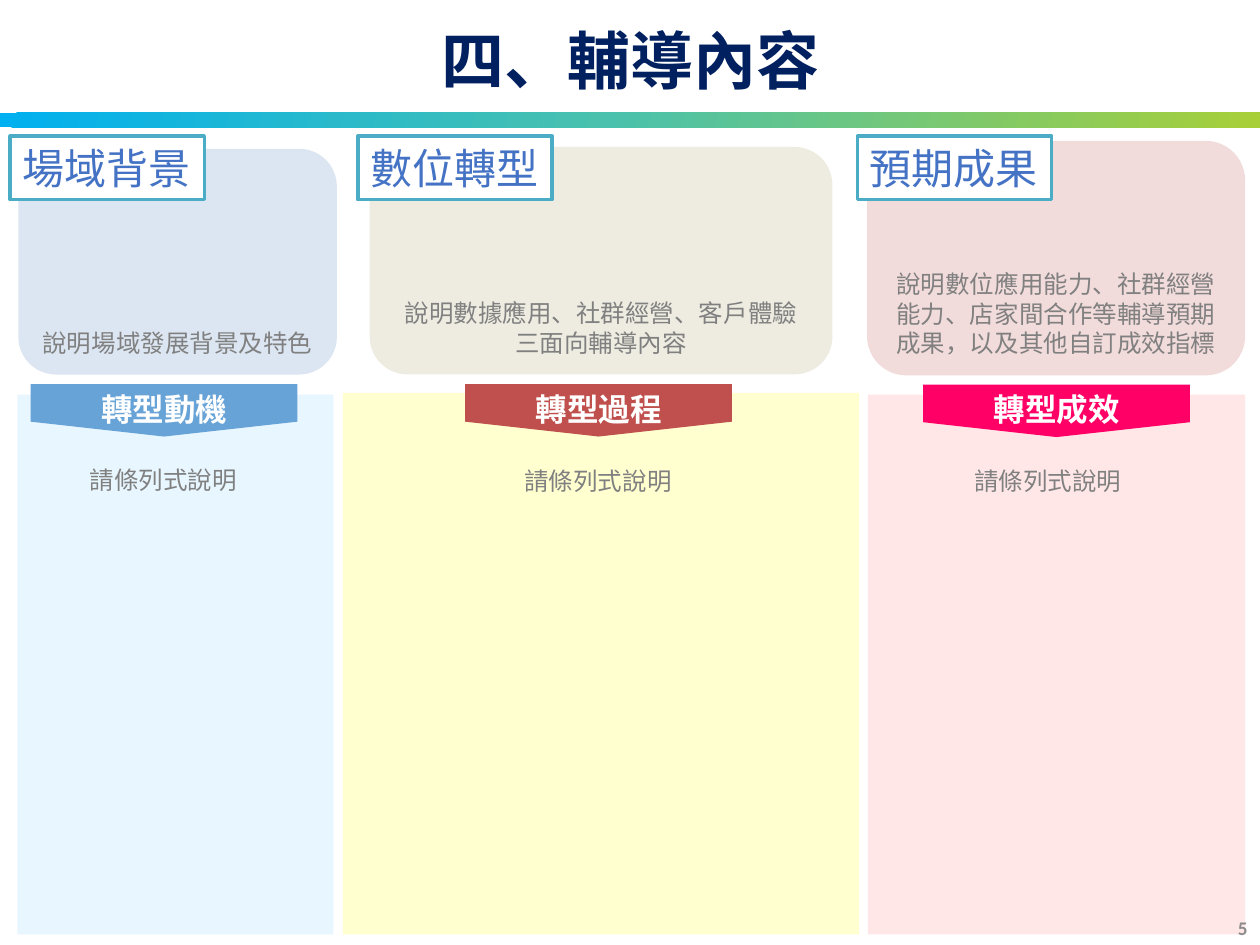
import copy
from dataclasses import dataclass

import pptx
import pptx.dml.color
import pptx.enum.shapes
import pptx.enum.text
import pptx.oxml.ns
import pptx.util
from lxml import etree

Pt = pptx.util.Pt
Align = pptx.enum.text.PP_ALIGN
Anchor = pptx.enum.text.MSO_ANCHOR
Preset = pptx.enum.shapes.MSO_SHAPE
qn = pptx.oxml.ns.qn


@dataclass(frozen=True)
class Theme:
    font: str = "Noto Sans CJK SC"
    banner_font: str = "Times New Roman"
    hint_font: str = "Arial"
    number_font: str = "Calibri"
    title_size: int = 36
    tag_size: int = 24
    banner_size: int = 18
    body_size: int = 14
    number_size: int = 11
    navy: str = "002060"
    white: str = "FFFFFF"
    gray: str = "808080"
    number_gray: str = "8C8C8C"
    tag_text: str = "4472C4"
    tag_line: str = "4BACC6"
    stripe: tuple = ((0, "00B0F0"), (0.48, "49C1AD"), (1, "A8CF38"))


@dataclass(frozen=True)
class Column:
    """One column; each area is left, top, width, height in points."""
    tag: str
    tag_left: float
    summary: str
    card: tuple
    card_color: str
    banner: str
    banner_at: tuple
    banner_color: str
    panel: tuple
    panel_color: str
    hint_at: tuple


COLUMNS = (
    Column("場域背景", 5.8, "說明場域發展背景及特色", (10.5, 85, 182, 129), "DCE6F2",
           "轉型動機", (17.5, 219.5), "67A3D7",
           (10, 225.5, 180.5, 308.5), "CCECFF", (37.5, 262)),
    Column("數位轉型", 204.5, "說明數據應用、社群經營、客戶體驗三面向輔導內容",
           (211.2, 84, 264.5, 130), "EEECE1",
           "轉型過程", (265.8, 219.5), "C0504D",
           (196, 224.5, 295, 309.5), "FFFF99", (286, 263)),
    Column("預期成果", 490, "說明數位應用能力、社群經營能力、店家間合作等輔導預期成果，以及其他自訂成效指標",
           (495.5, 80.5, 216, 134), "F2DCDB",
           "轉型成效", (527.5, 219.8), "FF0066",
           (496, 225.5, 215.5, 308.5), "FFCCCC", (543, 262.5)),
)


class SlideBuilder:
    def __init__(self, slide, theme):
        self.slide = slide
        self.theme = theme

    def color(self, value):
        return pptx.dml.color.RGBColor.from_string(value)

    def set_text(self, shape, text, size, color, font, bold=False,
                 align=Align.CENTER, anchor=Anchor.TOP):
        frame = shape.text_frame
        frame.word_wrap = True
        frame.auto_size = pptx.enum.text.MSO_AUTO_SIZE.NONE
        frame.vertical_anchor = anchor
        frame.text = text
        para = frame.paragraphs[0]
        para.alignment = align
        for span in para.runs:
            span.font.name = font
            span.font.size = Pt(size)
            span.font.bold = bold
            span.font.color.rgb = self.color(color)
            east_asian = etree.Element(qn("a:ea"), typeface=self.theme.font)
            span.font._element.find(qn("a:latin")).addnext(east_asian)

    def paint(self, shape, fill, line=None, opacity=None):
        shape.shadow.inherit = False
        shape.fill.solid()
        shape.fill.fore_color.rgb = self.color(fill)
        if opacity is not None:
            tint = shape._element.spPr.find(qn("a:solidFill"))[0]
            etree.SubElement(tint, qn("a:alpha"), val=str(opacity * 1000))
        if line:
            shape.line.color.rgb = self.color(line)
            shape.line.width = Pt(2)
        else:
            shape.line.fill.background()

    def shape(self, preset, area, fill, **style):
        shape = self.slide.shapes.add_shape(preset, *map(Pt, area))
        self.paint(shape, fill, **style)
        return shape

    def stripe(self, area):
        band = self.shape(Preset.RECTANGLE, area, self.theme.white)
        band.fill.gradient()
        band.fill.gradient_angle = 342
        stops = band._element.spPr.find(qn("a:gradFill")).find(qn("a:gsLst"))
        stops.insert(1, copy.deepcopy(stops[0]))
        for stop, (position, value) in zip(band.fill.gradient_stops, self.theme.stripe):
            stop.position = position
            stop.color.rgb = self.color(value)

    def title(self, text, area):
        title = self.slide.shapes.title
        title.left, title.top, title.width, title.height = map(Pt, area)
        self.set_text(title, text, self.theme.title_size, self.theme.navy,
                      self.theme.font, bold=True, anchor=Anchor.MIDDLE)

    def text(self, area, text, size, color, font, **style):
        box = self.slide.shapes.add_textbox(*map(Pt, area))
        self.set_text(box, text, size, color, font, **style)
        return box

    def panel(self, area, color):
        self.shape(Preset.RECTANGLE, area, color, opacity=47)

    def banner(self, left, top, text, color):
        """Draw a ribbon with a shallow point below, and its label."""
        width, shoulder, height = 152.5, 21.5, 30
        outline = self.slide.shapes.build_freeform(Pt(left), Pt(top))
        corners = ((width, 0), (width, shoulder), (width / 2, height), (0, shoulder))
        outline.add_line_segments([(Pt(left + x), Pt(top + y)) for x, y in corners])
        self.paint(outline.convert_to_shape(), color)
        box = self.text((left + 13.5, top + 1.5, 125.5, 23), text,
                        self.theme.banner_size, self.theme.white,
                        self.theme.banner_font, bold=True)
        frame = box.text_frame
        frame.margin_left = frame.margin_right = frame.margin_bottom = 0
        frame.margin_top = Pt(1.8)

    def card(self, area, text, color):
        card = self.shape(Preset.ROUNDED_RECTANGLE, area, color)
        self.set_text(card, text, self.theme.body_size, self.theme.gray,
                      self.theme.font, anchor=Anchor.BOTTOM)

    def tag(self, left, text):
        tag = self.shape(Preset.RECTANGLE, (left, 77.8, 111, 36.3), self.theme.white,
                         line=self.theme.tag_line)
        self.set_text(tag, text, self.theme.tag_size, self.theme.tag_text,
                      self.theme.font, align=Align.LEFT)

    def hint(self, left, top):
        self.text((left, top, 111.5, 24.5), "請條列式說明", self.theme.body_size,
                  self.theme.gray, self.theme.hint_font)

    def page_number(self, text, area):
        self.text(area, text, self.theme.number_size, self.theme.number_gray,
                  self.theme.number_font, bold=True, align=Align.RIGHT,
                  anchor=Anchor.MIDDLE)


def main():
    deck = pptx.Presentation()
    deck.slide_width, deck.slide_height = Pt(720), Pt(540)
    page = SlideBuilder(deck.slides.add_slide(deck.slide_layouts[5]), Theme())
    page.stripe((0, 64.5, 720, 8.2))
    page.title("四、輔導內容", (0, 0, 720, 67.5))
    for column in COLUMNS:
        page.panel(column.panel, column.panel_color)
        page.banner(*column.banner_at, column.banner, column.banner_color)
        page.card(column.card, column.summary, column.card_color)
        page.tag(column.tag_left, column.tag)
        page.hint(*column.hint_at)
    page.page_number("5", (552, 515.5, 168, 29))
    deck.save("out.pptx")


if __name__ == "__main__":
    main()
